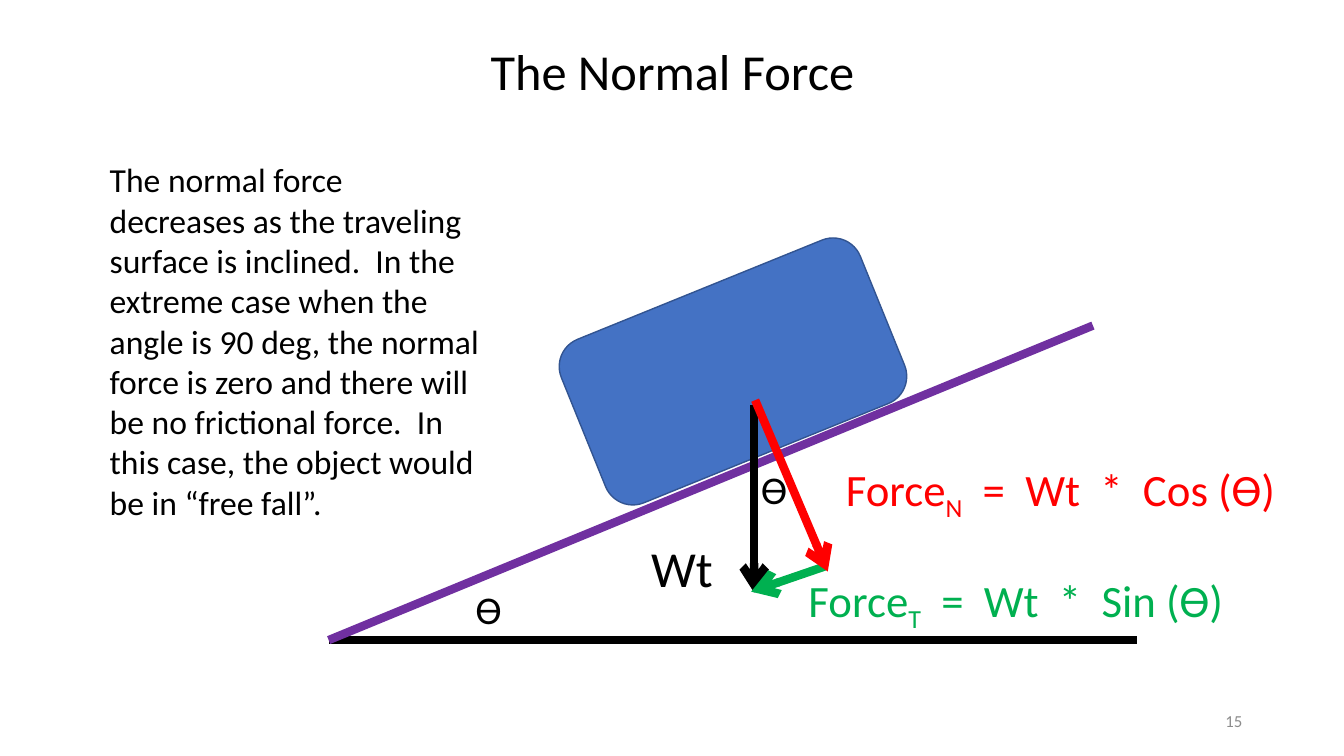
from lxml import etree
from pptx import Presentation
from pptx.dml.color import RGBColor
from pptx.enum.shapes import MSO_CONNECTOR, MSO_SHAPE
from pptx.enum.text import MSO_ANCHOR, PP_ALIGN
from pptx.oxml.ns import qn
from pptx.util import Inches, Pt

COLORS = {
    "black": "000000",
    "gray": "8C8C8C",
    "incline": "7030A0",
    "block": "4472C4",
    "block edge": "325491",
    "normal": "FF0000",
    "tangent": "00B050",
}

prs = Presentation()
prs.slide_width, prs.slide_height = Inches(13.33), Inches(7.5)
slide = prs.slides.add_slide(prs.slide_layouts[6])


def add_text(box, runs, size, color="black", align=PP_ALIGN.LEFT, anchor=MSO_ANCHOR.TOP):
    """Add a one-paragraph text box; every second run is a subscript."""
    frame = slide.shapes.add_textbox(*map(Inches, box)).text_frame
    frame.word_wrap = True
    frame.vertical_anchor = anchor
    paragraph = frame.paragraphs[0]
    paragraph.alignment = align
    paragraph.font.name = "Calibri"
    paragraph.font.size = Pt(size)
    paragraph.font.color.rgb = RGBColor.from_string(COLORS[color])
    for index, text in enumerate(runs):
        run = paragraph.add_run()
        run.text = text
        if index % 2:
            run.font._element.set("baseline", "-25000")


def add_line(start, end, color, arrow=False):
    line = slide.shapes.add_connector(
        MSO_CONNECTOR.STRAIGHT, *map(Inches, start + end))
    line.line.color.rgb = RGBColor.from_string(COLORS[color])
    line.line.width = Pt(6)
    if arrow:
        etree.SubElement(line.line._get_or_add_ln(), qn("a:tailEnd"), type="arrow")
    etree.SubElement(line._element.spPr, qn("a:effectLst"))


# Title, explanation and page number
add_text((9.42, 6.95, 3, 0.4), ["15"], 12, "gray", PP_ALIGN.RIGHT, MSO_ANCHOR.MIDDLE)
add_text((2.04, 0.35, 9.26, 0.71), ["The Normal Force"], 36, align=PP_ALIGN.CENTER)
add_text((0.99, 1.53, 3.87, 3.74), [
    "The normal force decreases as the traveling surface is inclined.  "
    "In the extreme case when the angle is 90 deg, the normal force is zero "
    "and there will be no frictional force.  In this case, the object would "
    "be in “free fall”."], 24)

# Ground, incline and the block resting on it
corner = (3.26, 6.35)
add_line(corner, (11.28, 6.35), "black")
add_line(corner, (10.84, 3.23), "incline")

block = slide.shapes.add_shape(
    MSO_SHAPE.ROUNDED_RECTANGLE, Inches(5.67), Inches(2.81), Inches(3.2), Inches(1.75))
block.rotation = 337.9
block.shadow.inherit = False
block.fill.solid()
block.fill.fore_color.rgb = RGBColor.from_string(COLORS["block"])
block.line.color.rgb = RGBColor.from_string(COLORS["block edge"])
block.line.width = Pt(1)

# Weight and its two components
add_line((7.48, 4.02), (7.48, 5.88), "black", arrow=True)
add_line((8.18, 5.62), (7.45, 5.87), "tangent", arrow=True)
add_line((7.49, 3.97), (8.21, 5.67), "normal", arrow=True)

# Labels
for left, top in ((4.62, 5.76), (7.45, 4.57)):
    add_text((left, top, 0.75, 0.57), ["ϴ"], 28)
add_text((6.36, 5.28, 1.08, 0.71), ["Wt"], 36)
for left, top, subscript, function, color in (
    (8.29, 4.53, "N", "Cos", "normal"),
    (7.92, 5.63, "T", "Sin", "tangent"),
):
    add_text((left, top, 4.65, 0.64),
             ["Force", subscript, f"  =  Wt  *  {function} (ϴ)"], 32, color)

prs.save("out.pptx")
